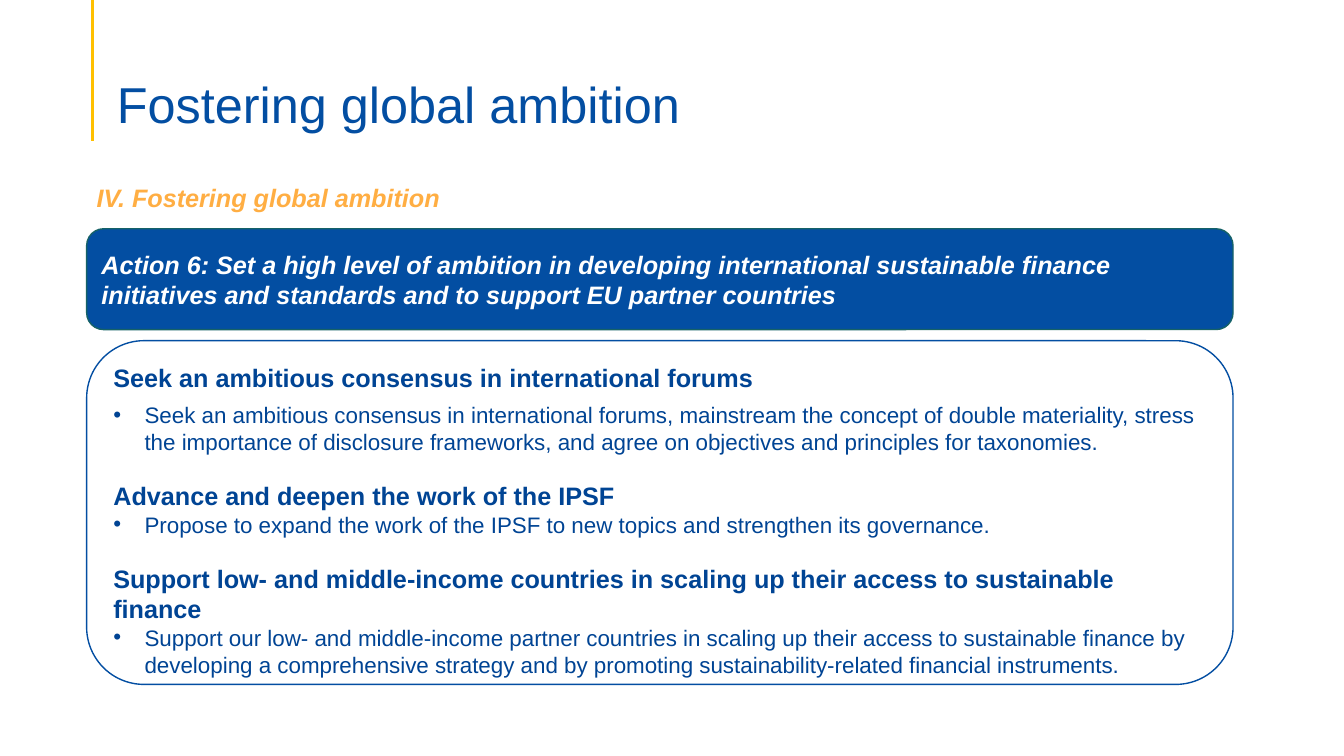
from lxml.etree import SubElement
from pptx import Presentation
from pptx.dml.color import RGBColor
from pptx.enum.shapes import MSO_CONNECTOR, MSO_SHAPE
from pptx.enum.text import MSO_ANCHOR, PP_ALIGN
from pptx.oxml.ns import qn
from pptx.util import Inches, Pt

TITLE = "Fostering global ambition"
SECTION = "IV. Fostering global ambition"
ACTION = (
    "Action 6: Set a high level of ambition in developing international sustainable "
    "finance initiatives and standards and to support EU partner countries"
)
GOALS = [
    ("Seek an ambitious consensus in international forums",
     "Seek an ambitious consensus in international forums, mainstream the concept of "
     "double materiality, stress the importance of disclosure frameworks, and agree on "
     "objectives and principles for taxonomies."),
    ("Advance and deepen the work of the IPSF",
     "Propose to expand the work of the IPSF to new topics and strengthen its governance."),
    ("Support low- and middle-income countries in scaling up their access to sustainable finance",
     "Support our low- and middle-income partner countries in scaling up their access to "
     "sustainable finance by developing a comprehensive strategy and by promoting "
     "sustainability-related financial instruments."),
]
COLORS = {
    "blue": "034EA2", "text": "004494", "teal": "166267",
    "orange": "FFAE43", "yellow": "FFC000", "white": "FFFFFF",
}
LEFT, WIDTH = 0.86, 11.37
BULLET_INDENT = 0.31
GOAL_GAP = 18.4


def color(name):
    return RGBColor.from_string(COLORS[name])


def style(para, size, color_name, bold=False, italic=False):
    para.alignment = PP_ALIGN.LEFT
    font = para.font
    font.name, font.size = "Arial", Pt(size)
    font.bold, font.italic = bold, italic
    font.color.rgb = color(color_name)


def add_bullet(para):
    properties = para._p.get_or_add_pPr()
    properties.set("marL", str(Inches(BULLET_INDENT)))
    properties.set("indent", str(-Inches(BULLET_INDENT)))
    SubElement(properties, qn("a:buFont"), typeface="Arial")
    SubElement(properties, qn("a:buChar"), char="•")


def add_panel(page, top, height, fill, line, anchor):
    panel = page.shapes.add_shape(
        MSO_SHAPE.ROUNDED_RECTANGLE,
        Inches(LEFT), Inches(top), Inches(WIDTH), Inches(height))
    panel.shadow.inherit = False
    panel.fill.solid()
    panel.fill.fore_color.rgb = color(fill)
    panel.line.color.rgb = color(line)
    panel.line.width = Pt(1)
    panel.text_frame.word_wrap = True
    panel.text_frame.vertical_anchor = anchor
    return panel.text_frame


def add_accent_line(page):
    accent = page.shapes.add_connector(
        MSO_CONNECTOR.STRAIGHT, Inches(0.92), 0, Inches(0.92), Inches(1.4))
    accent.line.color.rgb = color("yellow")
    accent.line.width = Pt(2.25)
    SubElement(accent._element.spPr, qn("a:effectLst"))


def set_title(page):
    title = page.shapes.title
    title.left, title.top = Inches(1.06), Inches(0.47)
    title.width, title.height = Inches(11.61), Inches(0.86)
    frame = title.text_frame
    frame.text = TITLE
    frame.vertical_anchor = MSO_ANCHOR.BOTTOM
    frame.margin_bottom = 0
    frame.paragraphs[0].line_spacing = 0.9
    style(frame.paragraphs[0], 36, "blue")


def add_goals(page):
    frame = add_panel(page, 3.38, 3.41, "white", "blue", MSO_ANCHOR.TOP)
    for number, (heading, detail) in enumerate(GOALS):
        para = frame.add_paragraph() if number else frame.paragraphs[0]
        para.text = heading
        if number:
            para.space_before = Pt(GOAL_GAP)
        else:
            para.space_after = Pt(6)
        style(para, 18, "text", bold=True)

        para = frame.add_paragraph()
        para.text = detail
        add_bullet(para)
        style(para, 16, "text")


def add_action(page):
    frame = add_panel(page, 2.27, 1, "blue", "teal", MSO_ANCHOR.MIDDLE)
    frame.text = ACTION
    style(frame.paragraphs[0], 18, "white", bold=True, italic=True)


def add_section(page):
    box = page.shapes.add_textbox(
        Inches(LEFT), Inches(1.76), Inches(3.64), Inches(0.4))
    box.text_frame.word_wrap = False
    box.text_frame.text = SECTION
    style(box.text_frame.paragraphs[0], 18, "orange", bold=True, italic=True)


def main():
    deck = Presentation()
    deck.slide_width, deck.slide_height = Inches(13.33), Inches(7.5)
    page = deck.slides.add_slide(deck.slide_layouts[5])
    add_accent_line(page)
    set_title(page)
    add_goals(page)
    add_action(page)
    add_section(page)
    deck.save("out.pptx")


if __name__ == "__main__":
    main()
